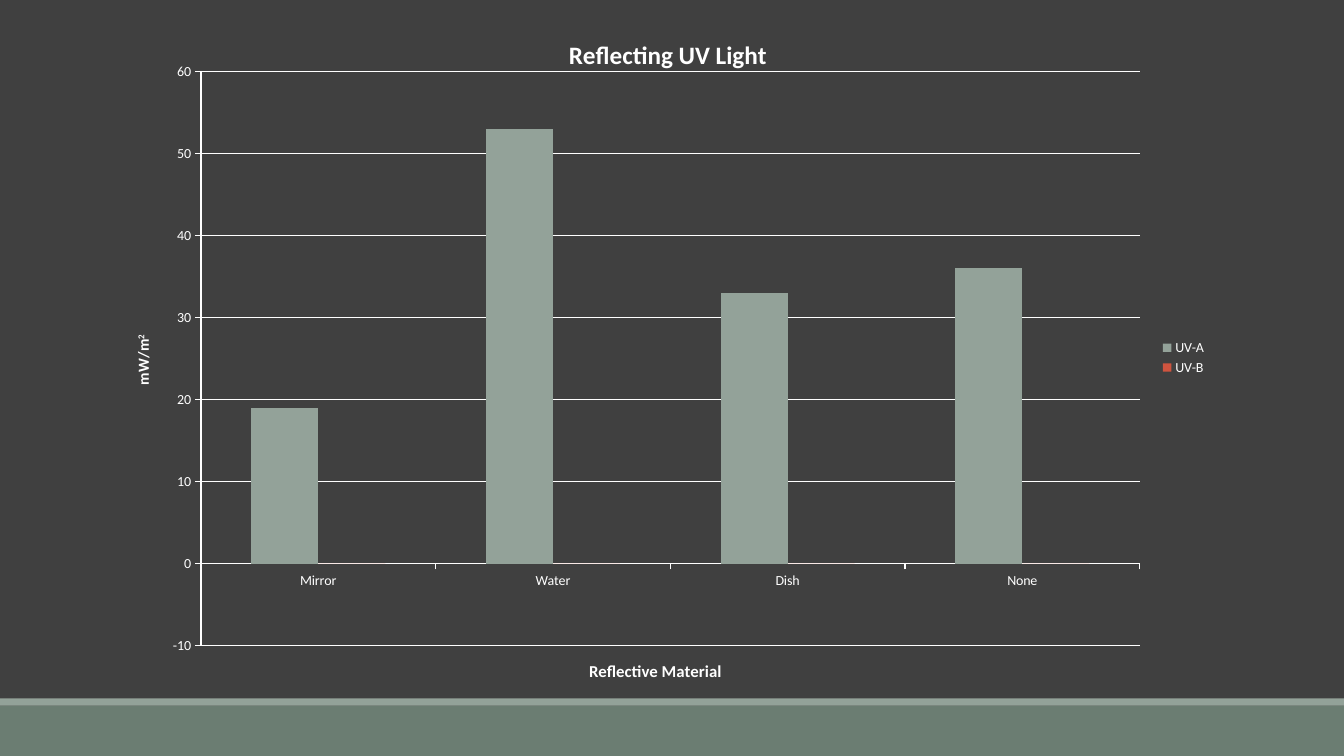
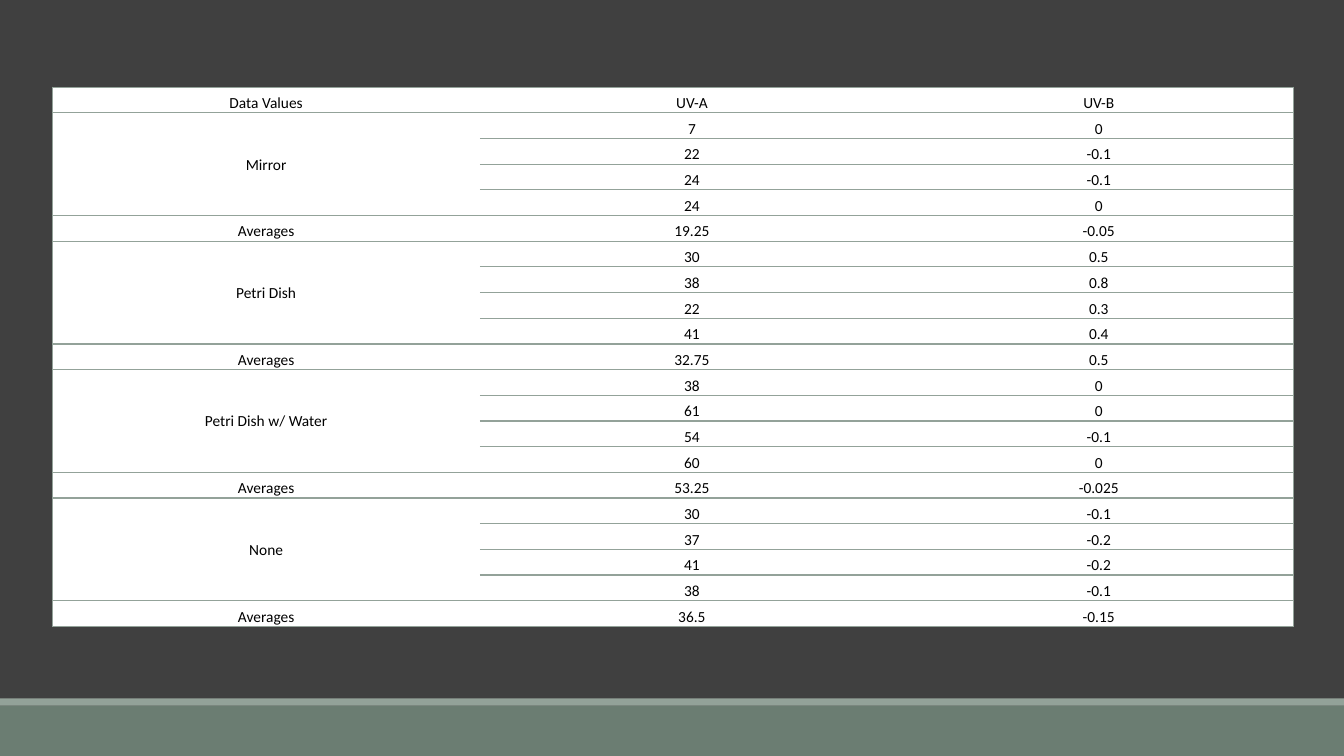
from lxml.etree import SubElement
from pptx import Presentation
from pptx.chart.data import CategoryChartData
from pptx.dml.color import RGBColor
from pptx.enum.chart import XL_CHART_TYPE, XL_LEGEND_POSITION, XL_TICK_MARK
from pptx.enum.shapes import MSO_SHAPE
from pptx.enum.text import MSO_ANCHOR, PP_ALIGN
from pptx.oxml.ns import qn
from pptx.util import Emu, Pt

PX = 9525
WIDTH, HEIGHT = 1280, 720
FONT = "Calibri"
BLACK = RGBColor(0x00, 0x00, 0x00)
WHITE = RGBColor(0xFF, 0xFF, 0xFF)
DARK = RGBColor(0x40, 0x40, 0x40)
GREEN = RGBColor(0x6B, 0x7D, 0x72)
SAGE = RGBColor(0x93, 0xA2, 0x99)
RED = RGBColor(0xCF, 0x54, 0x3F)
NO_STYLE = "{2D5ABB26-0587-4C30-8999-92F81FD0307C}"

BANDS = [(672, 48, GREEN), (665, 7, SAGE)]  # top, height, colour

CHART_BOX = (123, 31, 1036, 623)
PLOT = (0.066, 0.06, 0.863, 0.883)
MATERIALS = ["Mirror", "Water", "Dish", "None"]
SERIES = [
    ("UV-A", [19, 53, 33, 36], SAGE),
    ("UV-B", [0, 0, 0, 0], RED),
]

TABLE_BOX = (50, 83, 1182, 514)
COLUMNS = [407, 404, 371]
HEADER = ("Data Values", "UV-A", "UV-B")
GROUPS = [
    ("Mirror", [("7", "0"), ("22", "-0.1"), ("24", "-0.1"), ("24", "0")],
     ("19.25", "-0.05")),
    ("Petri Dish", [("30", "0.5"), ("38", "0.8"), ("22", "0.3"), ("41", "0.4")],
     ("32.75", "0.5")),
    ("Petri Dish w/ Water", [("38", "0"), ("61", "0"), ("54", "-0.1"), ("60", "0")],
     ("53.25", "-0.025")),
    ("None", [("30", "-0.1"), ("37", "-0.2"), ("41", "-0.2"), ("38", "-0.1")],
     ("36.5", "-0.15")),
]


def px(*lengths):
    return [Emu(n * PX) for n in lengths]


def write_text(tf, text, size=11, color=WHITE, bold=False, superscript=""):
    p = tf.paragraphs[0]
    p.alignment = PP_ALIGN.CENTER
    for part in filter(None, (text, superscript)):
        r = p.add_run()
        r.text = part
        r.font.name, r.font.size, r.font.bold = FONT, Pt(size), bold
        r.font.color.rgb = color
    if superscript:
        r.font._element.set("baseline", "30000")


def add_slide(prs):
    slide = prs.slides.add_slide(prs.slide_layouts[6])
    slide.background.fill.solid()
    slide.background.fill.fore_color.rgb = DARK
    for top, height, color in BANDS:
        sp = slide.shapes.add_shape(MSO_SHAPE.RECTANGLE, *px(0, top, WIDTH, height))
        sp.shadow.inherit = False
        sp.fill.solid()
        sp.fill.fore_color.rgb = color
        sp.line.fill.background()
    return slide


def set_layout(element, index, **settings):
    """Place a chart part by hand; index is where its layout element belongs."""
    layout = element.find(qn("c:layout"))
    if layout is not None:
        element.remove(layout)
    layout = element.makeelement(qn("c:layout"))
    element.insert(index, layout)
    manual = SubElement(layout, qn("c:manualLayout"))
    for name, value in settings.items():
        SubElement(manual, qn(f"c:{name}")).set("val", str(value))


def place_title(title, text, x, y, **style):
    write_text(title.text_frame, text, bold=True, **style)
    set_layout(title.element, 1, xMode="edge", yMode="edge", x=x, y=y)


def set_line(fmt):
    fmt.line.color.rgb = WHITE
    fmt.line.width = Pt(1)


def add_uv_chart(slide):
    data = CategoryChartData()
    data.categories = MATERIALS
    for name, values, _ in SERIES:
        data.add_series(name, values)
    chart = slide.shapes.add_chart(
        XL_CHART_TYPE.COLUMN_CLUSTERED, *px(*CHART_BOX), data).chart
    chart.font.name, chart.font.size = FONT, Pt(10)
    chart.font.color.rgb = WHITE

    plot = chart.plots[0]
    plot.gap_width, plot.overlap = 150, 0
    plot.vary_by_categories = False
    for series, (_, _, color) in zip(plot.series, SERIES):
        series.invert_if_negative = False
        series.format.fill.solid()
        series.format.fill.fore_color.rgb = color

    cat_axis, val_axis = chart.category_axis, chart.value_axis
    for axis in (cat_axis, val_axis):
        axis.major_tick_mark = XL_TICK_MARK.OUTSIDE
        axis.minor_tick_mark = XL_TICK_MARK.NONE
        set_line(axis.format)
    val_axis.minimum_scale, val_axis.maximum_scale = -10, 60
    val_axis.major_unit = 10
    val_axis.has_major_gridlines = True
    set_line(val_axis.major_gridlines.format)

    chart.has_title = True
    place_title(chart.chart_title, "Reflecting UV Light", 0.4, 0, size=18)
    chart.chart_title.element.find(qn("c:overlay")).set("val", "1")
    place_title(cat_axis.axis_title, "Reflective Material", 0.42, 0.96, size=12)
    place_title(val_axis.axis_title, "mW/m", 0, 0.46, size=11, superscript="2")
    body = val_axis.axis_title.element.find(".//" + qn("a:bodyPr"))
    body.set("rot", "-5400000")
    body.set("vert", "horz")

    chart.has_legend = True
    chart.legend.position = XL_LEGEND_POSITION.RIGHT
    chart.legend.include_in_layout = False
    x, y, w, h = PLOT
    set_layout(chart.element.find(".//" + qn("c:plotArea")), 0,
               layoutTarget="inner", xMode="edge", yMode="edge", x=x, y=y, w=w, h=h)


def add_border(cell, side):
    ln = SubElement(cell._tc.get_or_add_tcPr(), qn(f"a:ln{side}"), w=str(Pt(1)))
    SubElement(SubElement(ln, qn("a:solidFill")), qn("a:srgbClr"), val=str(SAGE))


def fill_cell(cell, text, sides):
    cell.margin_left, cell.margin_right, cell.margin_top, cell.margin_bottom = px(1, 1, 1, 0)
    cell.vertical_anchor = MSO_ANCHOR.MIDDLE if cell.is_merge_origin else MSO_ANCHOR.BOTTOM
    for side in sides:
        add_border(cell, side)
    cell.fill.solid()
    cell.fill.fore_color.rgb = WHITE
    if text:
        write_text(cell.text_frame, text, color=BLACK)


def add_data_table(slide):
    rows, merges = [HEADER], []
    for name, readings, averages in GROUPS:
        merges.append((len(rows), len(rows) + len(readings) - 1))
        rows += [("" if i else name, *pair) for i, pair in enumerate(readings)]
        rows.append(("Averages", *averages))

    frame = slide.shapes.add_table(len(rows), len(COLUMNS), *px(*TABLE_BOX))
    table = frame.table
    table.first_row = table.horz_banding = False
    table._tbl.tblPr.find(qn("a:tableStyleId")).text = NO_STYLE
    for column, width in zip(table.columns, px(*COLUMNS)):
        column.width = width
    for row in table.rows:
        row.height = Emu(TABLE_BOX[3] * PX // len(rows))
    for first, last in merges:
        table.cell(first, 0).merge(table.cell(last, 0))
    for i, texts in enumerate(rows):
        for j, (text, sides) in enumerate(zip(texts, ("LTB", "TB", "RTB"))):
            cell = table.cell(i, j)
            fill_cell(cell, text, "L" if cell.is_spanned else sides)


def main():
    prs = Presentation()
    prs.slide_width, prs.slide_height = px(WIDTH, HEIGHT)
    add_uv_chart(add_slide(prs))
    add_data_table(add_slide(prs))
    prs.save("out.pptx")


if __name__ == "__main__":
    main()
